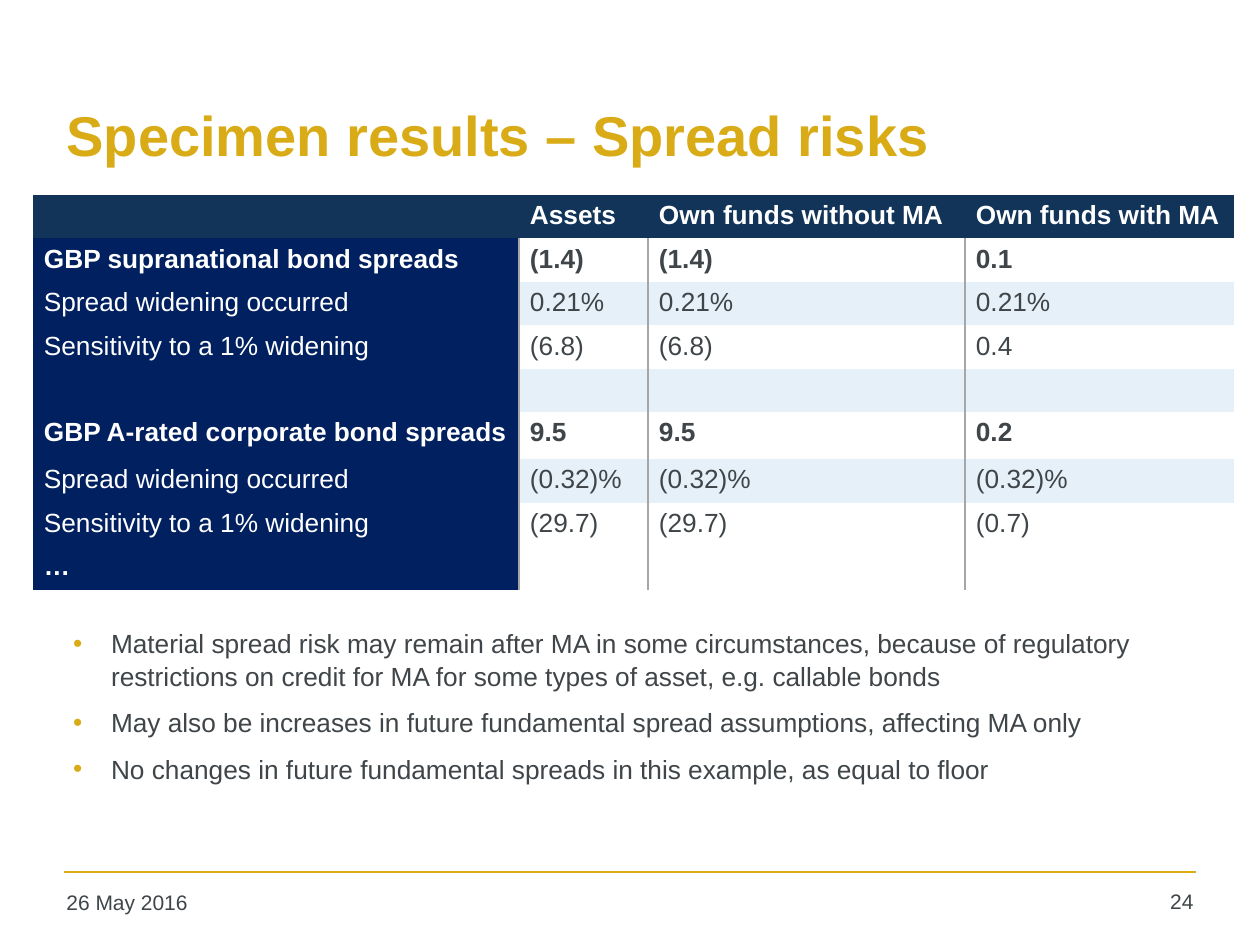
from dataclasses import dataclass

from lxml import etree
from pptx import Presentation
from pptx import util as u
from pptx.dml import color as col
from pptx.enum import shapes, text
from pptx.oxml import ns


@dataclass(frozen=True)
class Theme:
    face: str = "Arial"
    gold: str = "D9AB16"
    ink: str = "3F4548"
    white: str = "FFFFFF"
    head: str = "113458"
    navy: str = "002060"
    band: str = "E5F0F9"
    rule: str = "A6A6A6"
    title: int = 32
    body: int = 15
    foot: int = 12


@dataclass(frozen=True)
class Box:
    left: int
    top: int
    width: int
    height: int

    def place(self) -> tuple:
        return tuple(px(n) for n in (self.left, self.top, self.width, self.height))


@dataclass(frozen=True)
class Row:
    label: str
    cells: tuple = ("", "", "")
    bold: bool = False
    height: int = 42


@dataclass(frozen=True)
class Note:
    words: str
    box: Box
    align: text.PP_ALIGN


THEME = Theme()
LEFT, RIGHT = text.PP_ALIGN.LEFT, text.PP_ALIGN.RIGHT
GRID = Box(33, 195, 1201, 383)
COLS = (486, 129, 317, 269)
ROWS = (
    Row("", ("Assets", "Own funds without MA", "Own funds with MA"), True, 41),
    Row("GBP supranational bond spreads", ("(1.4)", "(1.4)", "0.1"), True),
    Row("Spread widening occurred", ("0.21%",) * 3),
    Row("Sensitivity to a 1% widening", ("(6.8)", "(6.8)", "0.4")),
    Row(""),
    Row("GBP A-rated corporate bond spreads", ("9.5", "9.5", "0.2"), True, 47),
    Row("Spread widening occurred", ("(0.32)%",) * 3),
    Row("Sensitivity to a 1% widening", ("(29.7)", "(29.7)", "(0.7)")),
    Row("…", bold=True),
)
POINTS = (
    "Material spread risk may remain after MA in some circumstances, because of "
    "regulatory restrictions on credit for MA for some types of asset, e.g. callable bonds",
    "May also be increases in future fundamental spread assumptions, affecting MA only",
    "No changes in future fundamental spreads in this example, as equal to floor",
)
NOTES = (
    Note("26 May 2016", Box(54, 883, 277, 45), LEFT),
    Note("24", Box(1116, 882, 90, 47), RIGHT),
)


def px(n: int) -> int:
    return u.Emu(round(n * 914400 / 126))


def apply(item, **vals) -> None:
    for name, val in vals.items():
        setattr(item, name, val)


def add(parent, tag: str, **vals):
    return etree.SubElement(parent, ns.qn(tag), vals)


def write(para, words: str, size: int, tint: str, bold: bool = False) -> None:
    if not words:
        add(para._p, "a:endParaRPr", sz=str(size * 100))
        return
    run = para.add_run()
    run.text = words
    apply(run.font, name=THEME.face, size=u.Pt(size), bold=bold)
    run.font.color.rgb = col.RGBColor.from_string(tint)


def edge(cell, sides: str) -> None:
    props = cell._tc.get_or_add_tcPr()
    for side in "LRTB":
        line = add(props, f"a:ln{side}", w=str(u.Pt(1)))
        if side in sides:
            fill = add(line, "a:solidFill")
            add(fill, "a:srgbClr", val=THEME.rule)
        else:
            add(line, "a:noFill")


def paint(cell, words: str, row: int, pos: int, bold: bool) -> None:
    last = len(COLS) - 1
    sides = ("L" if pos > 0 else "") + ("R" if pos < last else "")
    edge(cell, sides if row else "")
    if row == 0:
        back = THEME.head
    elif pos == 0:
        back = THEME.navy
    else:
        back = THEME.white if row % 2 or row == len(ROWS) - 1 else THEME.band
    cell.fill.solid()
    cell.fill.fore_color.rgb = col.RGBColor.from_string(back)
    apply(cell, margin_left=px(11), margin_right=px(11), margin_top=px(6),
          margin_bottom=px(6), vertical_anchor=text.MSO_ANCHOR.TOP)
    tint = THEME.white if row == 0 or pos == 0 else THEME.ink
    write(cell.text_frame.paragraphs[0], words, THEME.body, tint, bold)


def draw_grid(slide) -> None:
    grid = slide.shapes.add_table(len(ROWS), len(COLS), *GRID.place()).table
    apply(grid, first_row=False, horz_banding=False)
    for column, width in zip(grid.columns, COLS):
        column.width = px(width)
    for i, row in enumerate(ROWS):
        grid.rows[i].height = px(row.height)
        for j, words in enumerate((row.label, *row.cells)):
            paint(grid.cell(i, j), words, i, j, row.bold)


def draw_title(slide) -> None:
    title = slide.shapes.title
    left, top, width, height = Box(54, 55, 1143, 158).place()
    apply(title, left=left, top=top, width=width, height=height)
    frame = title.text_frame
    apply(frame, vertical_anchor=text.MSO_ANCHOR.MIDDLE, word_wrap=True,
          auto_size=text.MSO_AUTO_SIZE.NONE)
    para = frame.paragraphs[0]
    para.alignment = LEFT
    write(para, "Specimen results – Spread risks", THEME.title, THEME.gold, True)


def draw_list(slide) -> None:
    frame = slide.shapes.add_textbox(*Box(62, 621, 1143, 214).place()).text_frame
    apply(frame, word_wrap=True, margin_left=px(11), margin_right=px(11),
          margin_top=px(5), margin_bottom=px(5))
    for i, words in enumerate(POINTS):
        para = frame.add_paragraph() if i else frame.paragraphs[0]
        apply(para, line_spacing=1.05, space_before=u.Pt(7.5 if i else 0))
        props = para._p.get_or_add_pPr()
        props.set("marL", str(px(38)))
        props.set("indent", str(-px(38)))
        tint = add(props, "a:buClr")
        add(tint, "a:srgbClr", val=THEME.gold)
        add(props, "a:buFont", typeface=THEME.face)
        add(props, "a:buChar", char="•")
        write(para, words, THEME.body, THEME.ink)


def draw_foot(slide) -> None:
    line = slide.shapes.add_connector(
        shapes.MSO_CONNECTOR.STRAIGHT, px(64), px(872), px(1196), px(872))
    line.line.color.rgb = col.RGBColor.from_string(THEME.gold)
    line.line.width = u.Pt(1)
    add(line._element.spPr, "a:effectLst")
    for note in NOTES:
        frame = slide.shapes.add_textbox(*note.box.place()).text_frame
        frame.word_wrap = True
        para = frame.paragraphs[0]
        para.alignment = note.align
        write(para, note.words, THEME.foot, THEME.ink)


def main() -> None:
    deck = Presentation()
    apply(deck, slide_width=px(1260), slide_height=px(945))
    slide = deck.slides.add_slide(deck.slide_layouts[5])
    for draw in (draw_title, draw_foot, draw_grid, draw_list):
        draw(slide)
    deck.save("out.pptx")


if __name__ == "__main__":
    main()
